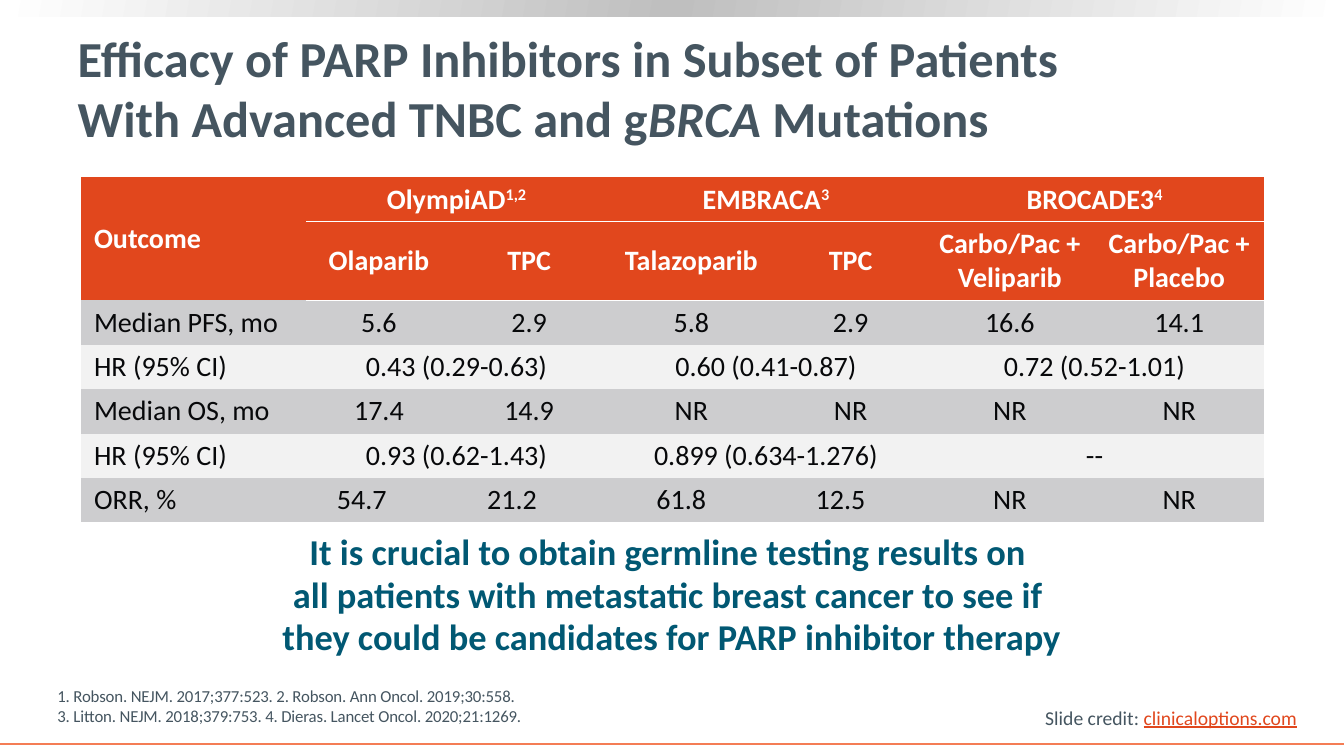
from dataclasses import dataclass

from lxml.etree import SubElement
from pptx import Presentation
from pptx.dml.color import RGBColor
from pptx.enum.shapes import MSO_CONNECTOR as Connector, MSO_SHAPE as Shape
from pptx.enum.text import MSO_ANCHOR as Anchor, MSO_AUTO_SIZE as AutoSize, PP_ALIGN as Align
from pptx.oxml import parse_xml
from pptx.oxml.ns import nsdecls, qn
from pptx.util import Inches, Pt


@dataclass(frozen=True)
class Theme:
    font: str = "Calibri"
    slate: str = "455560"
    orange: str = "E1471D"
    coral: str = "F47D55"
    teal: str = "015873"
    ink: str = "07080A"
    white: str = "FFFFFF"
    silver: str = "BFBFBF"
    band: str = "CDCDCF"
    light: str = "F2F2F2"
    title_size: int = 36
    takeaway_size: int = 26
    table_size: int = 20
    credit_size: int = 14
    note_size: int = 12


THEME = Theme()
PLAIN_TABLE = "{2D5ABB26-0587-4C30-8999-92F81FD0307C}"
SUPERSCRIPT = {"baseline": "30000"}

# Widths and heights are percentages of the slide
COLUMNS = [16.8, 8.25, 2.55, 11.55, 11.1, 1.5, 11.1, 12.6, 12.6]
ROWS = [5.87, 10.4] + [5.87] * 5

# Columns taken by each cell of a row
TRIALS = [1, 3, 3, 2]
ARMS = [1, 2, 1, 2, 1, 1, 1]
RATES = [1, 1, 2, 1, 2, 1, 1]

OUTCOMES = [
    (TRIALS, ["Outcome",
              [("OlympiAD", {}), ("1,2", SUPERSCRIPT)],
              [("EMBRACA", {}), ("3", SUPERSCRIPT)],
              [("BROCADE3", {}), ("4", SUPERSCRIPT)]]),
    (ARMS, ["", "Olaparib", "TPC", "Talazoparib", "TPC",
            "Carbo/Pac + Veliparib", "Carbo/Pac + Placebo"]),
    (ARMS, ["Median PFS, mo", "5.6", "2.9", "5.8", "2.9", "16.6", "14.1"]),
    (TRIALS, ["HR (95% CI)", "0.43 (0.29-0.63)", "0.60 (0.41-0.87)", "0.72 (0.52-1.01)"]),
    (ARMS, ["Median OS, mo", "17.4", "14.9", "NR", "NR", "NR", "NR"]),
    (TRIALS, ["HR (95% CI)", "0.93 (0.62-1.43)", "0.899 (0.634-1.276)", "--"]),
    (RATES, ["ORR, %", "54.7", "21.2", "61.8", "12.5", "NR", "NR"]),
]


def assign(target, values):
    for name, value in values.items():
        setattr(target, name, value)


class SlideBuilder:
    def __init__(self, deck, theme):
        self.theme = theme
        self.width, self.height = deck.slide_width, deck.slide_height
        self.page = deck.slides.add_slide(deck.slide_layouts[5])

    def across(self, percent):
        return round(self.width * percent / 100)

    def down(self, percent):
        return round(self.height * percent / 100)

    def frame(self, left, top, width, height):
        return self.across(left), self.down(top), self.across(width), self.down(height)

    def fill_para(self, para, spans, size, color, bold=False, align=Align.LEFT, spacing=1.0):
        """Fill a paragraph from text or (text, format) spans; a newline is a line break."""
        assign(para, {"alignment": align, "line_spacing": spacing,
                      "space_before": Pt(0), "space_after": Pt(0)})
        for text, changes in [(spans, {})] if isinstance(spans, str) else spans:
            for number, line in enumerate(text.split("\n")):
                if number:
                    para.add_line_break()
                span = para.add_run()
                span.text = line
                look = {"name": self.theme.font, "size": Pt(size), "bold": bold}
                attributes = {}
                for name, value in changes.items():
                    chosen = attributes if name in ("baseline", "spc") else look
                    chosen[name] = value
                tint = look.pop("color", color)
                assign(span.font, look)
                span.font.color.rgb = RGBColor.from_string(tint)
                for name, value in attributes.items():
                    span.font._element.set(name, value)

    def title(self, spans, *place):
        box = self.page.shapes.title
        assign(box, dict(zip(("left", "top", "width", "height"), self.frame(*place))))
        assign(box.text_frame, {"vertical_anchor": Anchor.MIDDLE, "word_wrap": True,
                                "auto_size": AutoSize.NONE})
        self.fill_para(box.text_frame.paragraphs[0], spans, self.theme.title_size,
                       self.theme.slate, bold=True)

    def text(self, lines, place, size, color, anchor=Anchor.TOP, wrap=True, **style):
        frame = self.page.shapes.add_textbox(*self.frame(*place)).text_frame
        assign(frame, {"word_wrap": wrap, "vertical_anchor": anchor})
        for number, spans in enumerate(lines):
            para = frame.add_paragraph() if number else frame.paragraphs[0]
            self.fill_para(para, spans, size, color, **style)

    def gradient_bar(self, colors, angle, *place):
        bar = self.page.shapes.add_shape(Shape.RECTANGLE, *self.frame(*place))
        bar.shadow.inherit = False
        bar.line.fill.background()
        step = 100000 // (len(colors) - 1)
        stops = "".join(f'<a:gs pos="{number * step}"><a:srgbClr val="{color}"/></a:gs>'
                        for number, color in enumerate(colors))
        bar._element.spPr.find(qn("a:prstGeom")).addnext(parse_xml(
            f'<a:gradFill {nsdecls("a")}><a:gsLst>{stops}</a:gsLst>'
            f'<a:lin ang="{angle * 60000}" scaled="0"/></a:gradFill>'))

    def rule(self, top, color, weight):
        level = self.down(top)
        line = self.page.shapes.add_connector(Connector.STRAIGHT, 0, level, self.width, level)
        line.line.color.rgb = RGBColor.from_string(color)
        line.line.width = Pt(weight)
        SubElement(line._element.spPr, qn("a:effectLst"))

    def border(self, cell, side):
        cell._tc.get_or_add_tcPr().insert(0, parse_xml(
            f'<a:{side} {nsdecls("a")} w="{Pt(1)}"><a:solidFill>'
            f'<a:srgbClr val="{self.theme.white}"/></a:solidFill></a:{side}>'))

    def table(self, left, top, columns, heights, rows):
        place = self.frame(left, top, sum(columns), sum(heights))
        table = self.page.shapes.add_table(len(heights), len(columns), *place).table
        table._tbl.tblPr.find(qn("a:tableStyleId")).text = PLAIN_TABLE
        assign(table, {"first_row": False, "horz_banding": False})
        for column, width in zip(table.columns, columns):
            column.width = self.across(width)
        for row, height in zip(table.rows, heights):
            row.height = self.down(height)
        for number, (widths, texts) in enumerate(rows):
            self.table_row(table, number, widths, texts)
        table.cell(0, 0).merge(table.cell(1, 0))

    def table_row(self, table, number, widths, texts):
        header = number < 2
        fill = self.theme.orange if header else (self.theme.band, self.theme.light)[number % 2]
        for column, cell in enumerate(table.rows[number].cells):
            cell.fill.solid()
            cell.fill.fore_color.rgb = RGBColor.from_string(fill)
            assign(cell, {"margin_left": self.across(1), "margin_right": self.across(1),
                          "margin_top": self.down(0.67), "margin_bottom": self.down(0.67),
                          "vertical_anchor": Anchor.MIDDLE})
            if header and column:
                self.border(cell, ("lnB", "lnT")[number])
        start = 0
        for width, spans in zip(widths, texts):
            cell = table.cell(number, start)
            if width > 1:
                cell.merge(table.cell(number, start + width - 1))
            if spans:
                self.fill_para(cell.text_frame.paragraphs[0], spans, self.theme.table_size,
                               self.theme.white if header else self.theme.ink, bold=header,
                               align=Align.CENTER if start else Align.LEFT)
            start += width


def main():
    deck = Presentation()
    assign(deck, {"slide_width": Inches(13.33), "slide_height": Inches(7.5)})
    slide = SlideBuilder(deck, THEME)
    slide.gradient_bar([THEME.white, THEME.silver, THEME.white], 190, 0, 0, 100, 2.13)
    slide.rule(98.4, THEME.coral, 1.5)
    slide.text([[("Slide credit: ", {}),
                 ("clinicaloptions.com", {"color": THEME.orange, "underline": True})]],
               (77.03, 92.67, 20.4, 4.53), THEME.credit_size, THEME.slate, wrap=False)
    slide.title([("Efficacy of PARP Inhibitors in Subset of Patients \n"
                  "With Advanced TNBC and g", {}),
                 ("BRCA", {"italic": True}), (" Mutations", {})],
                5.03, 3.47, 91.35, 16.13)
    slide.table(6, 23.47, COLUMNS, ROWS, OUTCOMES)
    slide.text(["It is crucial to obtain germline testing results on \n"
                "all patients with metastatic breast cancer to see if \n"
                "they could be candidates for PARP inhibitor therapy"],
               (6, 69.6, 88.05, 18.27), THEME.takeaway_size, THEME.teal,
               bold=True, align=Align.CENTER, spacing=0.98)
    slide.text([[(source, {"spc": "-10"})] for source in (
                    "1. Robson. NEJM. 2017;377:523. 2. Robson. Ann Oncol. 2019;30:558.",
                    "3. Litton. NEJM. 2018;379:753. 4. Dieras. Lancet Oncol. 2020;21:1269.")],
               (3.53, 90, 64.43, 6.67), THEME.note_size, THEME.slate, anchor=Anchor.BOTTOM)
    deck.save("out.pptx")


if __name__ == "__main__":
    main()
